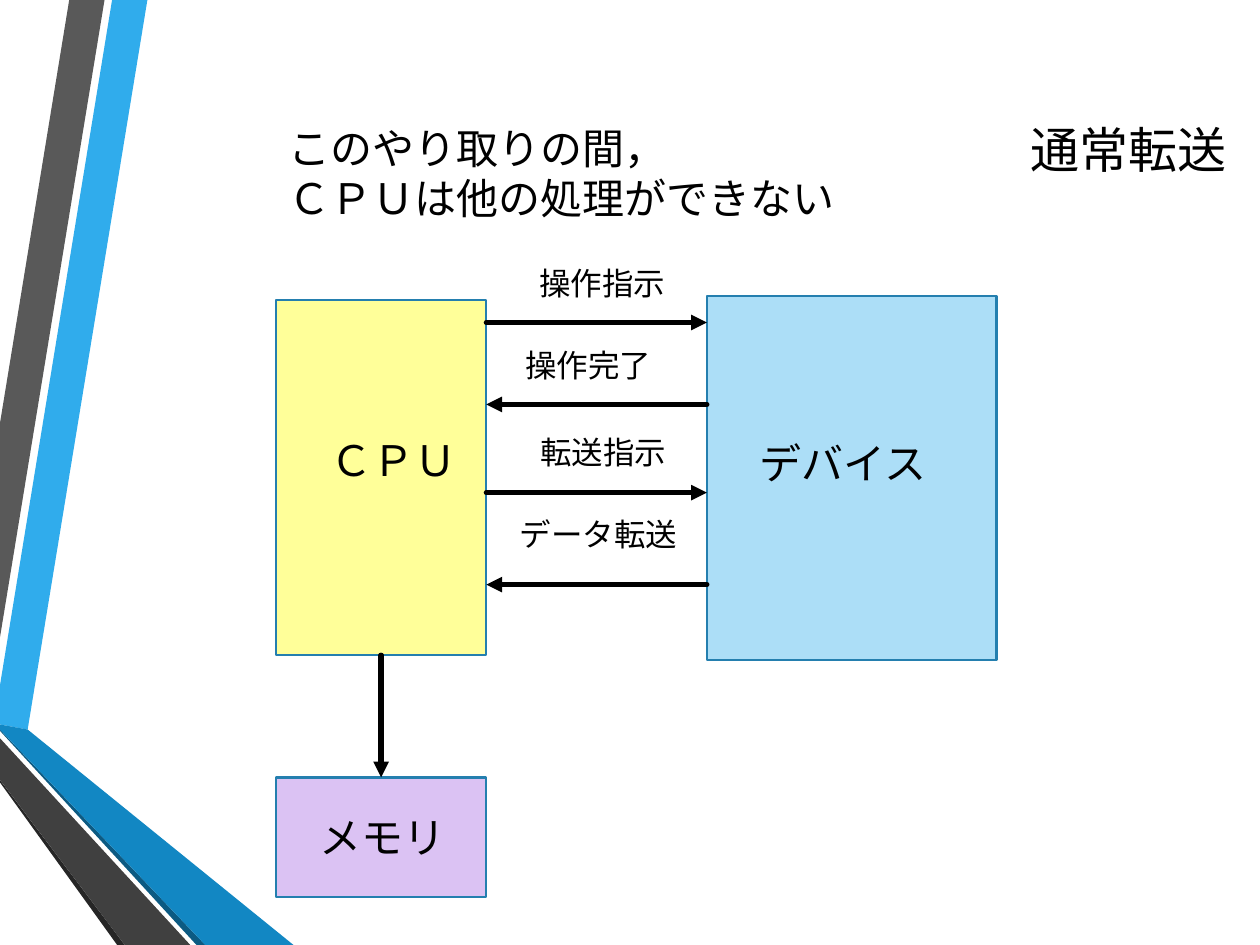
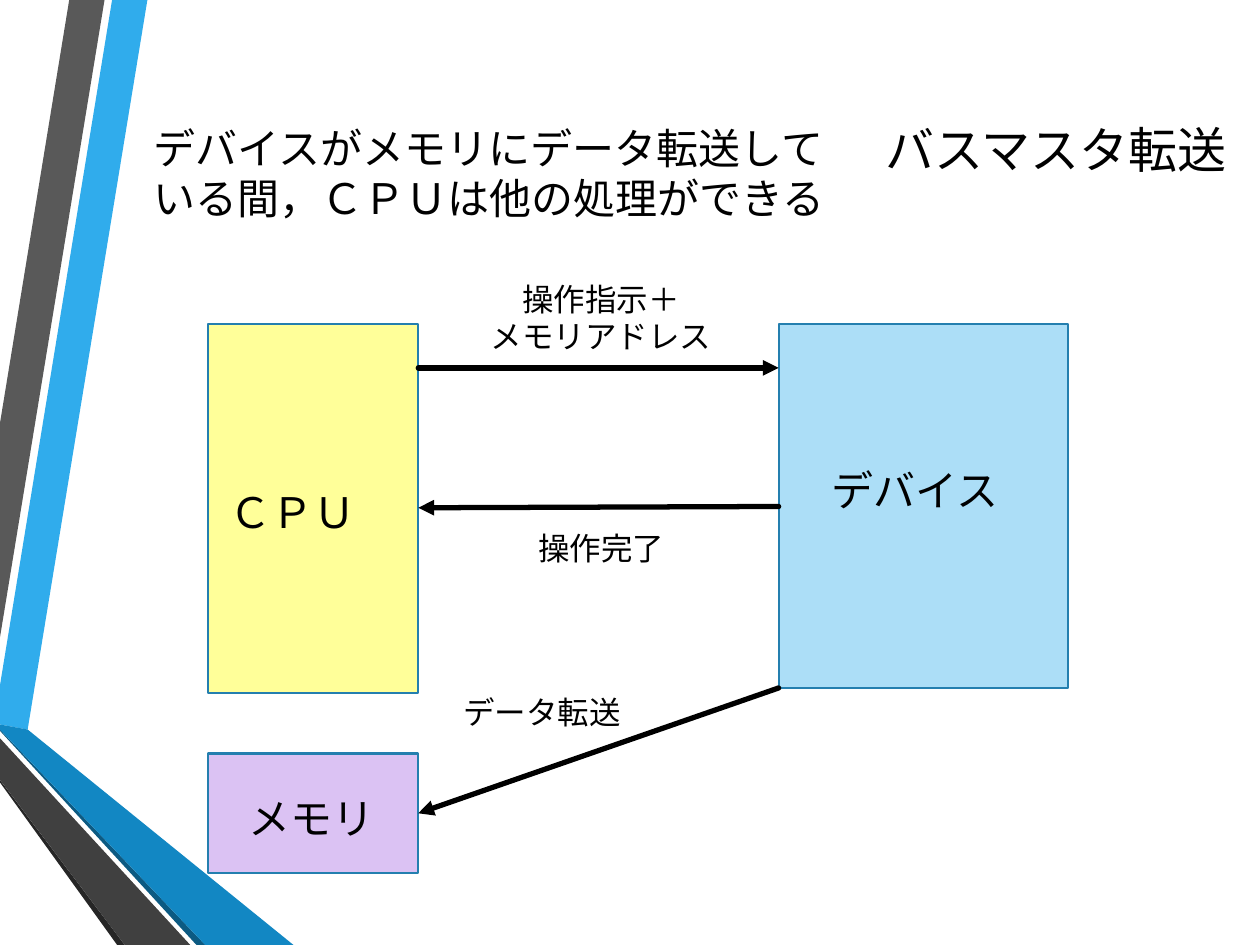
import collections

import lxml.etree
import pptx
import pptx.dml.color
import pptx.enum.lang
import pptx.enum.shapes
import pptx.enum.text
import pptx.oxml.ns
import pptx.util

COLS, ROWS = 100, 75
WIDTH, HEIGHT = pptx.util.Inches(10), pptx.util.Inches(7.5)
FONT = "Cabin"
INK, OUTLINE = "000000", "247FAF"
TITLE_SIZE, BODY_SIZE, LABEL_SIZE = 28, 24, 18
ALIGN = pptx.enum.text.PP_ALIGN
ANCHOR = pptx.enum.text.MSO_ANCHOR

Box = collections.namedtuple("Box", "x y w h")
Node = collections.namedtuple("Node", "text fill label_w")
Flow = collections.namedtuple("Flow", "start end lines label")

CPU = Node("ＣＰＵ", "FFFF99", 13.1)
MEMORY = Node("メモリ", "DBC2F3", 13.1)
DEVICE = Node("デバイス", "ACDEF7", 18.4)
NODE_W, MEMORY_H = 16.7, 9.5
DEVICE_W, DEVICE_H = 23, 28.9

BANDS = [
    ("30ACEC", [(0, 54.4), (0, 57.5), (2.2, 57.9), (11.7, 0), (8.9, 0)]),
    ("595959", [(8.3, 0), (5.5, 0), (0, 33.6), (0, 50.6)]),
    ("262626", [(0, 61.9), (0, 62.1), (9.3, 75), (9.9, 75)]),
    ("0C5A82", [(0, 57.9), (0, 58), (15.6, 75), (16.3, 75)]),
    ("1287C3", [(0, 57.9), (16.3, 75), (23.3, 75), (2.2, 57.9), (0, 57.5)]),
    ("404040", [(0, 61.9), (9.9, 75), (15.1, 75), (0, 58.6)]),
]


def color(value):
    return pptx.dml.color.RGBColor.from_string(value)


def point(x, y):
    return round(x * WIDTH / COLS), round(y * HEIGHT / ROWS)


def inside(box, x, y, w, h):
    return Box(box.x + x, box.y + y, w, h)


def place(box):
    return point(box.x, box.y) + point(box.w, box.h)


def add_text(slide, box, lines, size, align=ALIGN.CENTER, anchor=ANCHOR.TOP):
    tf = slide.shapes.add_textbox(*place(box)).text_frame
    tf.word_wrap = True
    tf.vertical_anchor = anchor
    for i, line in enumerate(lines):
        p = tf.add_paragraph() if i else tf.paragraphs[0]
        p.alignment = align
        r = p.add_run()
        r.text = line
        r.font.name = FONT
        r.font.size = pptx.util.Pt(size)
        r.font.color.rgb = color(INK)
        r.font.language_id = pptx.enum.lang.MSO_LANGUAGE_ID.JAPANESE


def add_bands(slide):
    for fill, corners in BANDS:
        first, *rest = [point(x, y) for x, y in corners]
        builder = slide.shapes.build_freeform(*first)
        builder.add_line_segments(rest, close=True)
        sp = builder.convert_to_shape()
        sp.shadow.inherit = False
        sp.fill.solid()
        sp.fill.fore_color.rgb = color(fill)
        sp.line.fill.background()


def add_node(slide, node, box, label_x, label_y):
    sp = slide.shapes.add_shape(
        pptx.enum.shapes.MSO_SHAPE.RECTANGLE, *place(box))
    sp.shadow.inherit = False
    sp.fill.solid()
    sp.fill.fore_color.rgb = color(node.fill)
    sp.line.color.rgb = color(OUTLINE)
    sp.line.width = pptx.util.Pt(1.25)
    label = inside(box, label_x, label_y, node.label_w, 5)
    add_text(slide, label, [node.text], BODY_SIZE)


def add_arrow(slide, box, start, end):
    ends = [point(box.x + x, box.y + y) for x, y in (start, end)]
    cxn = slide.shapes.add_connector(
        pptx.enum.shapes.MSO_CONNECTOR.STRAIGHT, *ends[0], *ends[1])
    cxn.line.color.rgb = color(INK)
    cxn.line.width = pptx.util.Pt(3)
    qn = pptx.oxml.ns.qn
    sp_pr = cxn.element.find(qn("p:spPr"))
    ln = sp_pr.find(qn("a:ln"))
    ln.set("cap", "rnd")
    lxml.etree.SubElement(ln, qn("a:tailEnd"), type="triangle")
    lxml.etree.SubElement(sp_pr, qn("a:effectLst"))


def add_diagram(slide, box, nodes, flows):
    for node, bounds, label in nodes:
        add_node(slide, node, inside(box, *bounds), *label)
    for flow in flows:
        add_arrow(slide, box, flow.start, flow.end)
        if flow.lines:
            x, y, w = flow.label
            label = inside(box, x, y, w, 1 + 3 * len(flow.lines))
            add_text(slide, label, flow.lines, LABEL_SIZE)


def add_transfer_slide(prs, title, caption, caption_x, box, nodes, flows):
    slide = prs.slides.add_slide(prs.slide_layouts[6])
    add_bands(slide)
    add_text(slide, Box(14, 1, 84.3, 21.7), [title], TITLE_SIZE,
             ALIGN.RIGHT, ANCHOR.MIDDLE)
    add_diagram(slide, box, nodes, flows)
    add_text(slide, Box(caption_x, 9.2, 70.3 - caption_x, 9.1), caption,
             BODY_SIZE, ALIGN.LEFT)


def add_normal_transfer(prs):
    box = Box(21.9, 23.5, 57.2, 47.7)
    left, right = NODE_W, box.w - DEVICE_W
    memory_y, cpu_bottom = box.h - MEMORY_H, 28.5
    nodes = [
        (CPU, (0, 0.3, NODE_W, 28.2), (2.8, 10.2)),
        (MEMORY, (0, memory_y, NODE_W, MEMORY_H), (1.9, 2.2)),
        (DEVICE, (right, 0, DEVICE_W, DEVICE_H), (1.6, 10.7)),
    ]
    flows = [
        Flow((left, 2.1), (right, 2.1), ["操作指示"], (18.1, -3, 15.6)),
        Flow((right, 8.6), (left, 8.6), ["操作完了"], (16.4, 3.5, 16.8)),
        Flow((left, 15.6), (right, 15.6), ["転送指示"], (18.2, 10.4, 15.6)),
        Flow((right, 22.9), (left, 22.9), ["データ転送"], (17.8, 16.9, 15.6)),
        Flow((NODE_W / 2, cpu_bottom), (NODE_W / 2, memory_y), [], None),
    ]
    caption = ["このやり取りの間，", "ＣＰＵは他の処理ができない"]
    add_transfer_slide(prs, "通常転送", caption, 21.9, box, nodes, flows)


def add_bus_master_transfer(prs):
    box = Box(16.5, 25.7, 68.3, 43.6)
    left, right = NODE_W, box.w - DEVICE_W
    memory_y = box.h - MEMORY_H
    nodes = [
        (CPU, (0, 0, NODE_W, 29.3), (0.2, 12.4)),
        (MEMORY, (0, memory_y, NODE_W, MEMORY_H), (1.7, 2.6)),
        (DEVICE, (right, 0, DEVICE_W, DEVICE_H), (1.6, 10.7)),
    ]
    flows = [
        Flow((left, 3.5), (right, 3.5), ["操作指示＋", "メモリアドレス"],
             (17.1, -4, 28.2)),
        Flow((right, 14.5), (left, 14.6), ["操作完了"], (22.8, 15.8, 16.8)),
        Flow((right, DEVICE_H), (left, memory_y + MEMORY_H / 2),
             ["データ転送"], (18.7, 28.8, 15.6)),
    ]
    caption = ["デバイスがメモリにデータ転送して", "いる間，ＣＰＵは他の処理ができる"]
    add_transfer_slide(prs, "バスマスタ転送", caption, 11.2, box, nodes, flows)


def main():
    prs = pptx.Presentation()
    prs.slide_width, prs.slide_height = WIDTH, HEIGHT
    add_normal_transfer(prs)
    add_bus_master_transfer(prs)
    prs.save("out.pptx")


if __name__ == "__main__":
    main()
